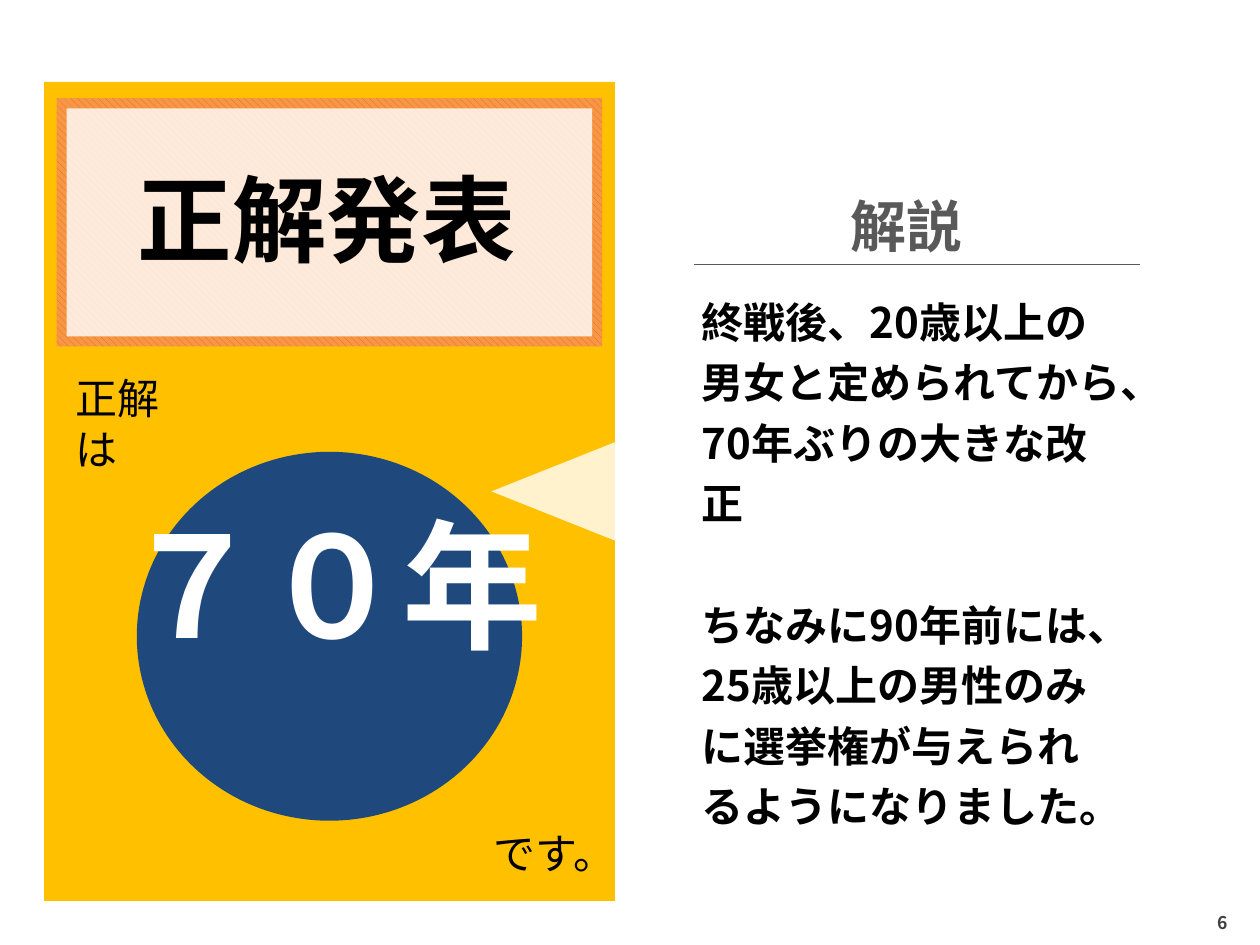
from pptx import Presentation
from pptx import util as u
from pptx.dml.color import RGBColor
from pptx.enum import dml, shapes, text
from pptx.oxml.ns import qn
from lxml import etree

FONT = "Noto Sans CJK JP"
GOLD = RGBColor(0xFF, 0xC0, 0x00)
ORANGE = RGBColor(0xF7, 0x96, 0x46)
DARK_ORANGE = RGBColor(0xE4, 0x6C, 0x0A)
NAVY = RGBColor(0x1F, 0x49, 0x7D)
WHITE = RGBColor(0xFF, 0xFF, 0xFF)
BLACK = RGBColor(0, 0, 0)
GRAY = RGBColor(0x59, 0x59, 0x59)
DARK_GRAY = RGBColor(0x40, 0x40, 0x40)
SHAPE = shapes.MSO_SHAPE
ALIGN = text.PP_ALIGN
ANCHOR = text.MSO_ANCHOR


def place(sp, x, y, w, h):
    sp.left, sp.top, sp.width, sp.height = map(u.Inches, (x, y, w, h))


def add_block(s, kind, x, y, w, h, color=None, alpha=None):
    sp = s.shapes.add_shape(kind, *map(u.Inches, (x, y, w, h)))
    sp.shadow.inherit = False
    sp.line.fill.background()
    if color is not None:
        sp.fill.solid()
        sp.fill.fore_color.rgb = color
    if alpha:
        clr = sp.fill._xPr.find(qn("a:solidFill"))[0]
        etree.SubElement(clr, qn("a:alpha")).set("val", str(alpha * 1000))
    return sp


def write(sp, *paras, size=24, color=BLACK, bold=False, align=ALIGN.LEFT,
          anchor=ANCHOR.TOP, spacing=None, gap=0, wrap=True, inset=None):
    tf = sp.text_frame
    tf.word_wrap = wrap
    tf.auto_size = text.MSO_AUTO_SIZE.NONE
    tf.vertical_anchor = anchor
    if inset is not None:
        tf.margin_left = tf.margin_right = u.Inches(inset)
        tf.margin_top = tf.margin_bottom = u.Inches(inset)
    for i, line in enumerate(paras):
        p = tf.add_paragraph() if i else tf.paragraphs[0]
        p.alignment = align
        p.line_spacing = spacing
        p.space_before = u.Pt(gap if i else 0)
        r = p.add_run()
        r.text = line
        f = r.font
        f.name, f.size, f.bold = FONT, u.Pt(size), bold
        f.color.rgb = color
        etree.SubElement(r._r.get_or_add_rPr(), qn("a:ea")).set("typeface", FONT)


def add_label(s, x, y, w, h, line, **fmt):
    sp = s.shapes.add_textbox(*map(u.Inches, (x, y, w, h)))
    write(sp, line, **fmt)


def bring_to_front(s, sp):
    s.shapes._spTree.append(sp._element)


def answer_panel(s, x, y, w, h):
    add_block(s, SHAPE.RECTANGLE, x, y, w, h, GOLD)
    frame = add_block(s, SHAPE.RECTANGLE, x + 0.1, y + 0.13, w - 0.2, 1.97)
    frame.fill.patterned()
    frame.fill.pattern = dml.MSO_PATTERN.WIDE_DOWNWARD_DIAGONAL
    frame.fill.fore_color.rgb = DARK_ORANGE
    frame.fill.back_color.rgb = ORANGE
    add_block(s, SHAPE.RECTANGLE, x + 0.18, y + 0.21, w - 0.36, 1.81, WHITE, 80)
    pointer = add_block(s, SHAPE.ISOSCELES_TRIANGLE, x + 3.68, y + 2.61,
                        1.02, 1.28, WHITE, 80)
    pointer.rotation = 270

    title = s.shapes.title
    place(title, x + 0.63, y + 0.58, 3.23, 1.01)
    write(title, "正解発表", size=54, bold=True, align=ALIGN.CENTER)
    bring_to_front(s, title)

    add_label(s, x + 0.15, y + 2.26, 1.16, 0.5, "正解は")
    add_label(s, x + 3.47, y + 5.87, 0.99, 0.5, "です。", wrap=False)
    circle = add_block(s, SHAPE.OVAL, x + 0.75, y + 2.95, 3.03, 2.9, NAVY)
    circle.line.color.rgb = NAVY
    circle.line.width = u.Pt(2)
    add_label(s, x + 0.4, y + 3.26, 3.78, 1.45, "７０年", size=80,
              color=WHITE, bold=True, align=ALIGN.CENTER)


def explanation_panel(s, x, y, w, h):
    add_label(s, x + 1.18, y, 1.1, 0.64, "解説", size=32, color=GRAY,
              bold=True, wrap=False)
    rule = s.shapes.add_connector(
        shapes.MSO_CONNECTOR.STRAIGHT,
        *map(u.Inches, (x + 0.04, y + 0.63, x + 3.58, y + 0.63)))
    rule.line.color.rgb = GRAY
    rule.line.width = u.Pt(0.75)
    etree.SubElement(rule._element.spPr, qn("a:effectLst"))

    body = s.placeholders[1]
    place(body, x, y + 0.75, w, h - 0.75)
    write(body,
          "終戦後、20歳以上の男女と定められてから、70年ぶりの大きな改正",
          "ちなみに90年前には、25歳以上の男性のみに選挙権が与えられるようになりました。",
          bold=True, spacing=1.2, gap=35)
    for p in body.text_frame.paragraphs:
        pPr = p._p.get_or_add_pPr()
        pPr.set("marL", "0")
        pPr.set("indent", "0")
        etree.SubElement(pPr, qn("a:buNone"))
    bring_to_front(s, body)


def page_number(s, x, y, w, h):
    sp = add_block(s, SHAPE.RECTANGLE, x, y, w, h, WHITE)
    write(sp, "6", size=10, color=DARK_GRAY, bold=True, align=ALIGN.CENTER,
          anchor=ANCHOR.MIDDLE, wrap=False, inset=0.04)


def main():
    prs = Presentation()
    prs.slide_width, prs.slide_height = u.Inches(10), u.Inches(7.5)
    s = prs.slides.add_slide(prs.slide_layouts[1])
    answer_panel(s, 0.35, 0.65, 4.53, 6.5)
    explanation_panel(s, 5.47, 1.47, 3.53, 4.73)
    page_number(s, 9.41, 7.15, 0.59, 0.35)
    prs.save("out.pptx")


if __name__ == "__main__":
    main()
